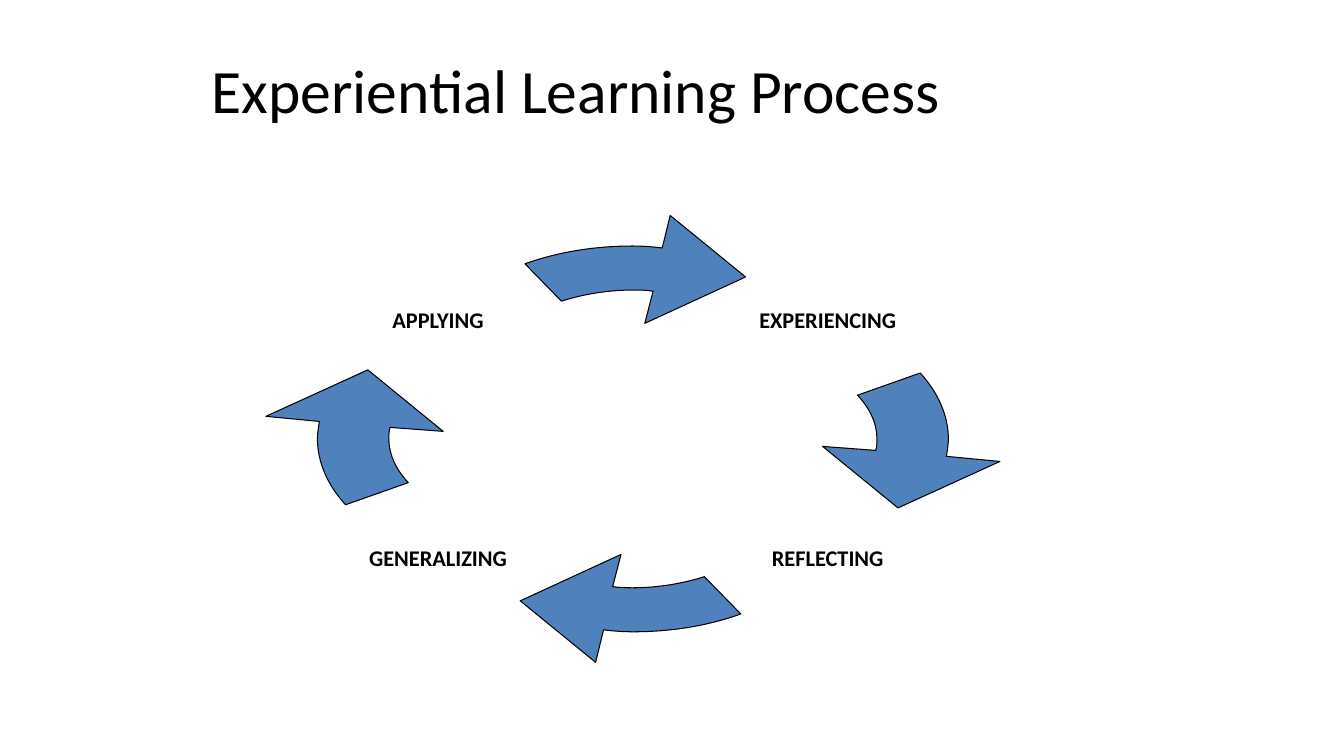
from dataclasses import dataclass, replace

from lxml.etree import SubElement
from pptx import Presentation
from pptx.dml.color import RGBColor
from pptx.enum.text import MSO_ANCHOR, PP_ALIGN
from pptx.oxml.ns import qn
from pptx.shapes.shapetree import GroupShapes
from pptx.slide import Slide
from pptx.text.text import TextFrame
from pptx.util import Cm, Pt

BLACK = RGBColor(0x00, 0x00, 0x00)
BLUE = RGBColor(0x4F, 0x81, 0xBD)
FONT = "Calibri"

CENTRE_X, CENTRE_Y = 15.95, 11.06
LABEL_DX, LABEL_DY = 4.91, 3.0
LABEL_WIDTH, LABEL_HEIGHT = 4.09, 2.49

Point = tuple[float, float]


@dataclass(frozen=True)
class Arrow:
    dx: float
    dy: float
    width: float
    height: float
    rotation: int
    inner_arc: tuple[Point, ...]
    outer_arc: tuple[Point, ...]
    head: tuple[Point, ...]

    def opposite(self) -> "Arrow":
        return replace(self, dx=-self.dx, dy=-self.dy, rotation=self.rotation + 180)


@dataclass(frozen=True)
class Label:
    text: str
    column: int
    row: int


TOP_ARROW = Arrow(
    dx=0, dy=-1.55, width=10.82, height=6.6, rotation=0,
    inner_arc=((0.51, -2.17), (0.33, -2.2), (0.15, -2.2), (0, -2.2),
               (-0.64, -2.2), (-1.27, -2.09), (-1.8, -1.92)),
    outer_arc=((-2.72, -2.86), (-1.88, -3.16), (-0.97, -3.31), (0, -3.31),
               (0.25, -3.31), (0.51, -3.29), (0.74, -3.26)),
    head=((0.94, -4.08), (2.84, -2.53), (0.3, -1.36)),
)
RIGHT_ARROW = Arrow(
    dx=2.54, dy=0, width=6.6, height=10.82, rotation=90,
    inner_arc=((0.29, -3.58), (0.19, -3.61), (0.09, -3.61), (0, -3.61),
               (-0.39, -3.61), (-0.77, -3.43), (-1.1, -3.12)),
    outer_arc=((-1.66, -4.7), (-1.16, -5.16), (-0.57, -5.41), (0, -5.41),
               (0.14, -5.41), (0.3, -5.38), (0.44, -5.36)),
    head=((0.57, -6.71), (1.74, -4.14), (0.19, -2.24)),
)
ARROWS = [TOP_ARROW, RIGHT_ARROW, TOP_ARROW.opposite(), RIGHT_ARROW.opposite()]

LABELS = [
    Label("EXPERIENCING", 1, -1),
    Label("GENERALIZING", -1, 1),
    Label("APPLYING", -1, -1),
    Label("REFLECTING", 1, 1),
]


def write_text(frame: TextFrame, text: str, *, size: int, bold: bool = False,
               align: PP_ALIGN = PP_ALIGN.LEFT, spacing: float = 1.0) -> None:
    frame.vertical_anchor = MSO_ANCHOR.MIDDLE
    para = frame.paragraphs[0]
    para.alignment = align
    para.line_spacing = spacing
    span = para.add_run()
    span.text = text
    span.font.name = FONT
    span.font.size = Pt(size)
    span.font.bold = bold
    span.font.color.rgb = BLACK


def add_title(page: Slide, text: str) -> None:
    title = page.shapes.title
    title.left, title.top, title.width, title.height = Cm(5.08), Cm(0.76), Cm(28.78), Cm(3.18)
    write_text(title.text_frame, text, size=44, spacing=0.9)


def add_arrow(ring: GroupShapes, arrow: Arrow) -> None:
    width, height = Cm(arrow.width), Cm(arrow.height)
    builder = ring.build_freeform(0, 0)
    builder.add_line_segments([(width, 0), (width, height)])
    shape = builder.convert_to_shape(
        Cm(CENTRE_X + arrow.dx - arrow.width / 2),
        Cm(CENTRE_Y + arrow.dy - arrow.height / 2),
    )
    outline = shape.element.find(".//" + qn("a:path"))
    for child in list(outline):
        outline.remove(child)

    def draw(command: str, *points: Point) -> None:
        segment = SubElement(outline, qn(command))
        for x, y in points:
            SubElement(segment, qn("a:pt"), x=str(Cm(x + arrow.width / 2)),
                       y=str(Cm(y + arrow.height / 2)))

    for command, arc in (("a:moveTo", arrow.inner_arc), ("a:lnTo", arrow.outer_arc)):
        draw(command, arc[0])
        draw("a:cubicBezTo", *arc[1:4])
        draw("a:cubicBezTo", *arc[4:])
    for corner in arrow.head:
        draw("a:lnTo", corner)
    draw("a:lnTo", arrow.inner_arc[0])
    draw("a:close")

    shape.rotation = arrow.rotation
    shape.shadow.inherit = False
    shape.fill.solid()
    shape.fill.fore_color.rgb = BLUE
    shape.line.color.rgb = BLACK
    shape.line.width = Pt(0.75)


def add_label(ring: GroupShapes, label: Label) -> None:
    box = ring.add_textbox(
        Cm(CENTRE_X + label.column * LABEL_DX - LABEL_WIDTH / 2),
        Cm(CENTRE_Y + label.row * LABEL_DY - LABEL_HEIGHT / 2),
        Cm(LABEL_WIDTH), Cm(LABEL_HEIGHT),
    )
    frame = box.text_frame
    frame.word_wrap = False
    frame.margin_left = frame.margin_right = frame.margin_top = frame.margin_bottom = Cm(0)
    write_text(frame, label.text, size=16, bold=True, align=PP_ALIGN.CENTER)


def main() -> None:
    deck = Presentation()
    deck.slide_width, deck.slide_height = Cm(33.87), Cm(19.05)
    page = deck.slides.add_slide(deck.slide_layouts.get_by_name("Title Only"))
    add_title(page, "Experiential Learning Process")
    ring = page.shapes.add_group_shape().shapes
    for arrow in ARROWS:
        add_arrow(ring, arrow)
    for label in LABELS:
        add_label(ring, label)
    deck.save("out.pptx")


if __name__ == "__main__":
    main()
